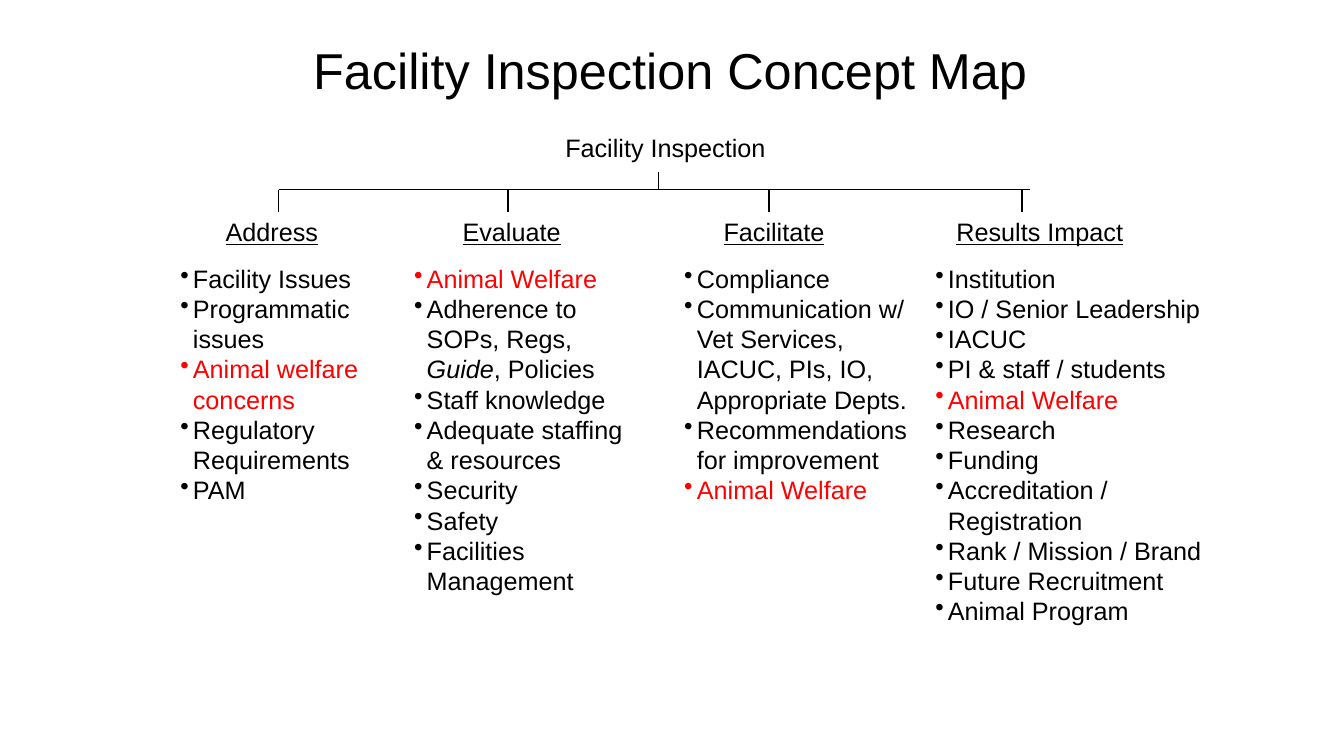
from lxml import etree
from pptx import Presentation
from pptx.dml.color import RGBColor
from pptx.enum import shapes, text
from pptx.oxml import ns
from pptx.util import Pt

BLACK = RGBColor(0x00, 0x00, 0x00)
RED = RGBColor(0xFF, 0x00, 0x00)

BAR_Y = 135.4
HEADING_TOP = 151.2
LIST_TOP = 184.3
STEM_X = 470.2
BAR_RIGHT = 735.8

# heading, (left, width), branch x, list (left, width, height), items; *...* is italic
COLUMNS = [
    ("Address", (154.1, 95.8), 199, (121.7, 164.2, 195.1),
     ["Facility Issues", "Programmatic issues", "Animal welfare concerns",
      "Regulatory Requirements", "PAM"]),
    ("Evaluate", (323.3, 85), 362.9, (288.7, 164.2, 279.4),
     ["Animal Welfare", "Adherence to SOPs, Regs, *Guide*, Policies",
      "Staff knowledge", "Adequate staffing & resources", "Security",
      "Safety", "Facilities Management"]),
    ("Facilitate", (509.8, 90.7), 549.4, (481.7, 175, 234),
     ["Compliance",
      "Communication w/ Vet Services, IACUC, PIs, IO, Appropriate Depts.",
      "Recommendations for improvement", "Animal Welfare"]),
    ("Results Impact", (676.1, 138.2), 730.1, (661, 205.2, 355),
     ["Institution", "IO / Senior Leadership", "IACUC",
      "PI & staff / students", "Animal Welfare", "Research", "Funding",
      "Accreditation / Registration", "Rank / Mission / Brand",
      "Future Recruitment", "Animal Program"]),
]


class ConceptMap:
    font_name = "Arial"
    body_size = 18
    title_size = 36
    bullet_indent = 9
    line_width = 1

    def __init__(self, slide):
        self.slide = slide

    def style(self, span, size, color=BLACK):
        span.font.name = self.font_name
        span.font.size = Pt(size)
        span.font.color.rgb = color

    def frame(self, left, top, width, height):
        box = self.slide.shapes.add_textbox(Pt(left), Pt(top), Pt(width), Pt(height))
        box.text_frame.word_wrap = True
        return box.text_frame

    def label(self, words, left, top, width, height=32.4, underline=False):
        frame = self.frame(left, top, width, height)
        frame.text = words
        span = frame.paragraphs[0].runs[0]
        self.style(span, self.body_size)
        span.font.underline = underline

    def title(self, words, left, top, width, height):
        frame = self.frame(left, top, width, height)
        frame.vertical_anchor = text.MSO_ANCHOR.MIDDLE
        frame.text = words
        para = frame.paragraphs[0]
        para.alignment = text.PP_ALIGN.CENTER
        self.style(para.runs[0], self.title_size)

    def bullets(self, items, left, top, width, height):
        """Add a bulleted list, with every animal welfare item in red."""
        frame = self.frame(left, top, width, height)
        for index, item in enumerate(items):
            para = frame.add_paragraph() if index else frame.paragraphs[0]
            color = RED if item.lower().startswith("animal welfare") else BLACK
            for part, words in enumerate(item.split("*")):
                span = para.add_run()
                span.text = words
                self.style(span, self.body_size, color)
                span.font.italic = part % 2 == 1
            properties = para._p.get_or_add_pPr()
            properties.set("marL", str(Pt(self.bullet_indent)))
            properties.set("indent", str(-Pt(self.bullet_indent)))
            bullet = etree.SubElement(properties, ns.qn("a:buChar"))
            bullet.set("char", "•")

    def line(self, x1, y1, x2, y2):
        line = self.slide.shapes.add_connector(
            shapes.MSO_CONNECTOR.STRAIGHT, Pt(x1), Pt(y1), Pt(x2), Pt(y2))
        line.line.color.rgb = BLACK
        line.line.width = Pt(self.line_width)
        etree.SubElement(line._element.spPr, ns.qn("a:effectLst"))


def main():
    deck = Presentation()
    deck.slide_width, deck.slide_height = Pt(960), Pt(540)
    concept_map = ConceptMap(deck.slides.add_slide(deck.slide_layouts[6]))

    concept_map.title("Facility Inspection Concept Map", 172.8, 9.4, 612, 80.6)
    concept_map.label("Facility Inspection", 396.7, 90.7, 164.2)
    concept_map.line(STEM_X, 123.1, STEM_X, BAR_Y)
    concept_map.line(COLUMNS[0][2], BAR_Y, BAR_RIGHT, BAR_Y)

    for heading, (left, width), branch_x, (list_left, list_width, height), items in COLUMNS:
        concept_map.line(branch_x, BAR_Y, branch_x, HEADING_TOP)
        concept_map.label(heading, left, HEADING_TOP, width, underline=True)
        concept_map.bullets(items, list_left, LIST_TOP, list_width, height)

    deck.save("out.pptx")


if __name__ == "__main__":
    main()
